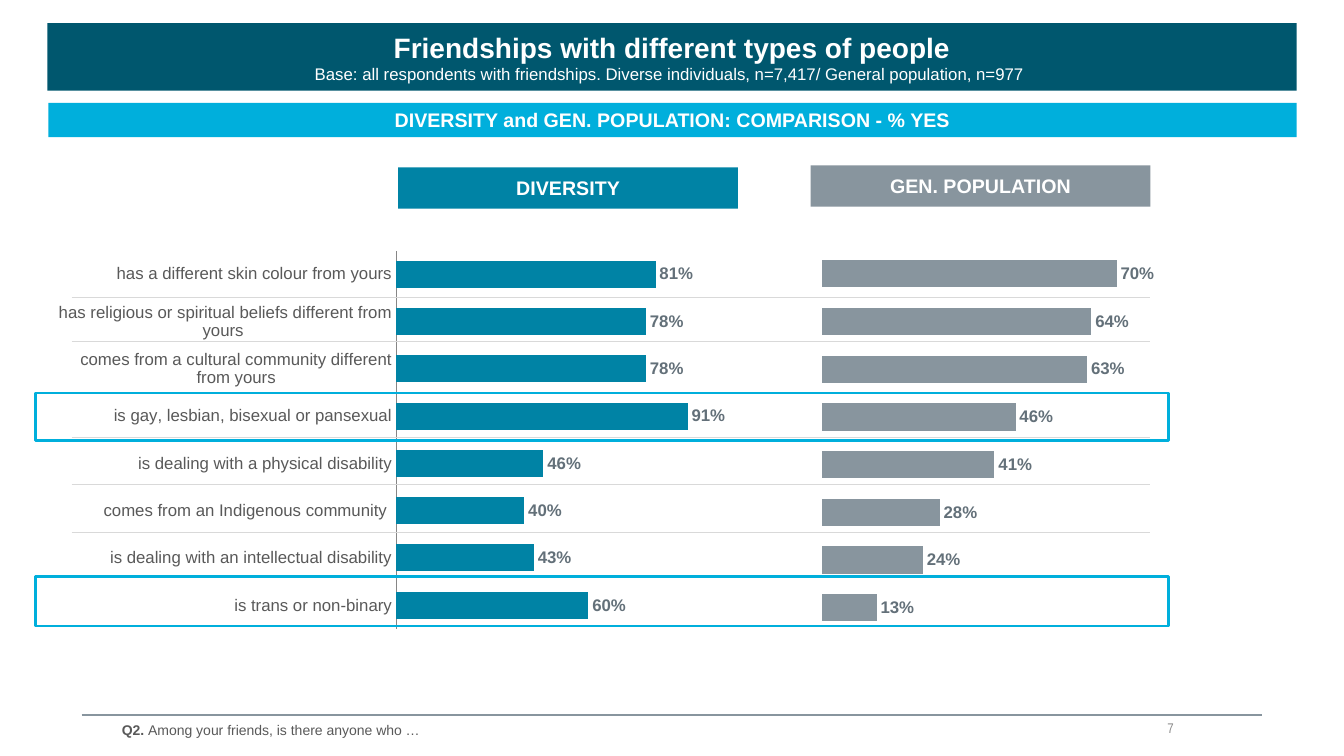
from lxml import etree
from pptx import Presentation
from pptx.chart.data import CategoryChartData
from pptx.dml.color import RGBColor
from pptx.enum.chart import XL_CHART_TYPE, XL_LABEL_POSITION, XL_TICK_LABEL_POSITION, XL_TICK_MARK
from pptx.enum.shapes import MSO_CONNECTOR, MSO_SHAPE
from pptx.enum.text import MSO_ANCHOR, PP_ALIGN
from pptx.oxml.ns import qn
from pptx.util import Inches, Pt

WHITE = RGBColor(0xFF, 0xFF, 0xFF)
NAVY = RGBColor(0x00, 0x57, 0x6E)
TEAL = RGBColor(0x00, 0x83, 0xA5)
CYAN = RGBColor(0x00, 0xAF, 0xDC)
SLATE = RGBColor(0x88, 0x95, 0x9E)
LABEL_GREY = RGBColor(0x63, 0x70, 0x79)
TEXT_GREY = RGBColor(0x59, 0x59, 0x59)
NUMBER_GREY = RGBColor(0x8C, 0x8C, 0x8C)
AXIS_GREY = RGBColor(0x86, 0x86, 0x86)
RULE_GREY = RGBColor(0xD9, 0xD9, 0xD9)

FRIEND_TYPES = [
    "has a different skin colour from yours",
    "has religious or spiritual beliefs different from yours ",
    "comes from a cultural community different from yours",
    "is gay, lesbian, bisexual or pansexual",
    "is dealing with a physical disability",
    "comes from an Indigenous community ",
    "is dealing with an intellectual disability",
    "is trans or non-binary",
]
DIVERSITY = [0.81, 0.78, 0.78, 0.91, 0.46, 0.40, 0.43, 0.60]
GENERAL = [0.70, 0.64, 0.63, 0.46, 0.41, 0.28, 0.24, 0.13]
ROW_RULES = [2.95, 3.39, 3.9, 4.34, 4.81, 5.28, 5.72]


def style_font(font, size, color, bold=False, name="Arial"):
    font.name = name
    font.size = Pt(size)
    font.bold = bold
    font.color.rgb = color


def add_span(para, text, size, color, bold=False, name="Arial"):
    span = para.add_run()
    span.text = text
    style_font(span.font, size, color, bold, name)


def clear_margins(frame):
    frame.margin_left = frame.margin_right = 0
    frame.margin_top = frame.margin_bottom = 0


def add_box(page, left, top, width, height):
    box = page.shapes.add_shape(MSO_SHAPE.RECTANGLE, Inches(left), Inches(top),
                                Inches(width), Inches(height))
    box.shadow.inherit = False
    return box


def add_banner(page, left, top, width, height, fill, lines):
    """Add a filled bar; lines holds (text, size, bold) for each paragraph."""
    banner = add_box(page, left, top, width, height)
    banner.fill.solid()
    banner.fill.fore_color.rgb = fill
    banner.line.fill.background()
    frame = banner.text_frame
    frame.word_wrap = True
    frame.vertical_anchor = MSO_ANCHOR.MIDDLE
    clear_margins(frame)
    for index, (text, size, bold) in enumerate(lines):
        para = frame.add_paragraph() if index else frame.paragraphs[0]
        para.alignment = PP_ALIGN.CENTER
        add_span(para, text, size, WHITE, bold)


def add_highlight(page, top, height):
    frame = add_box(page, 0.35, top, 11.24, height)
    frame.fill.background()
    frame.line.color.rgb = CYAN
    frame.line.width = Pt(2)


def add_rule(page, left, right, top, color, width):
    rule = page.shapes.add_connector(MSO_CONNECTOR.STRAIGHT, Inches(left), Inches(top),
                                     Inches(right), Inches(top))
    rule.line.color.rgb = color
    rule.line.width = Pt(width)
    etree.SubElement(rule._element.spPr, qn("a:effectLst"))


def add_text_box(page, left, top, width, height):
    box = page.shapes.add_textbox(Inches(left), Inches(top), Inches(width), Inches(height))
    box.text_frame.word_wrap = True
    return box.text_frame


def set_plot_layout(chart, x, y, width, height):
    """Fix the inner plot area, in fractions of the chart."""
    plot_area = chart._chartSpace.chart.plotArea
    for old in plot_area.findall(qn("c:layout")):
        plot_area.remove(old)
    layout = etree.Element(qn("c:layout"))
    manual = etree.SubElement(layout, qn("c:manualLayout"))
    settings = [("layoutTarget", "inner"), ("xMode", "edge"), ("yMode", "edge"),
                ("x", x), ("y", y), ("w", width), ("h", height)]
    for tag, value in settings:
        etree.SubElement(manual, qn(f"c:{tag}")).set("val", str(value))
    plot_area.insert(0, layout)


def add_bar_chart(page, place, categories, values, color, maximum, layout, show_categories):
    data = CategoryChartData(number_format="0%")
    data.categories = categories
    data.add_series("Series 1", values)
    chart = page.shapes.add_chart(XL_CHART_TYPE.BAR_CLUSTERED, *map(Inches, place), data).chart
    chart.has_legend = False
    chart.has_title = False
    style_font(chart.font, 12, TEXT_GREY)
    set_plot_layout(chart, *layout)

    values_axis = chart.value_axis
    values_axis.minimum_scale = 0
    values_axis.maximum_scale = maximum
    values_axis.has_major_gridlines = False
    values_axis.visible = False
    category_axis = chart.category_axis
    category_axis.reverse_order = True
    category_axis.visible = show_categories
    category_axis.major_tick_mark = XL_TICK_MARK.NONE
    category_axis.tick_label_position = XL_TICK_LABEL_POSITION.NEXT_TO_AXIS
    category_axis.format.line.color.rgb = AXIS_GREY
    category_axis.format.line.width = Pt(0.75)
    style_font(category_axis.tick_labels.font, 12, TEXT_GREY)

    plot = chart.plots[0]
    plot.gap_width = 75
    plot.vary_by_categories = False
    bars = plot.series[0]
    bars.format.fill.solid()
    bars.format.fill.fore_color.rgb = color
    labels = bars.data_labels
    labels.show_value = True
    labels.number_format = "0%"
    labels.number_format_is_linked = False
    labels.position = XL_LABEL_POSITION.OUTSIDE_END
    style_font(labels.font, 12, LABEL_GREY, True)


def add_footer(page):
    add_rule(page, 0.81, 12.52, 7.09, SLATE, 1.5)
    number = add_text_box(page, 8.73, 7.09, 2.91, 0.26)
    clear_margins(number)
    number.vertical_anchor = MSO_ANCHOR.MIDDLE
    number.paragraphs[0].alignment = PP_ALIGN.RIGHT
    add_span(number.paragraphs[0], "7", 10, NUMBER_GREY, name="Arial Narrow")
    question = add_text_box(page, 1.11, 7.11, 11.24, 0.27).paragraphs[0]
    add_span(question, "Q2. ", 10, TEXT_GREY, True)
    add_span(question, "Among your friends, is there anyone who …", 10, TEXT_GREY)


def main():
    deck = Presentation()
    deck.slide_width = Inches(13.33)
    deck.slide_height = Inches(7.5)
    page = deck.slides.add_slide(deck.slide_layouts[6])

    add_footer(page)
    add_banner(page, 0.47, 0.23, 12.39, 0.67, NAVY, [
        ("Friendships with different types of people", 20, True),
        ("Base: all respondents with friendships. Diverse individuals, n=7,417/ "
         "General population, n=977 ", 12, False),
    ])
    add_banner(page, 3.95, 1.66, 3.37, 0.41, TEAL, [("DIVERSITY", 14, True)])
    add_banner(page, 8.04, 1.64, 3.37, 0.41, SLATE, [("GEN. POPULATION", 14, True)])
    add_bar_chart(page, (0.47, 2.34, 7.03, 4.05), FRIEND_TYPES, DIVERSITY, TEAL, 1,
                  (0.492, 0.036, 0.452, 0.927), True)
    row_numbers = [str(row) for row in range(1, len(GENERAL) + 1)]
    add_bar_chart(page, (5.64, 2.46, 6.2, 3.95), row_numbers, GENERAL, SLATE, 0.8,
                  (0.405, 0.005, 0.539, 0.959), False)
    for top in ROW_RULES:
        add_rule(page, 0.71, 11.41, top, RULE_GREY, 0.75)
    add_highlight(page, 3.9, 0.47)
    add_highlight(page, 5.72, 0.49)
    add_banner(page, 0.48, 1.02, 12.38, 0.34, CYAN,
               [("DIVERSITY and GEN. POPULATION: COMPARISON - % YES", 14, True)])
    deck.save("out.pptx")


if __name__ == "__main__":
    main()
